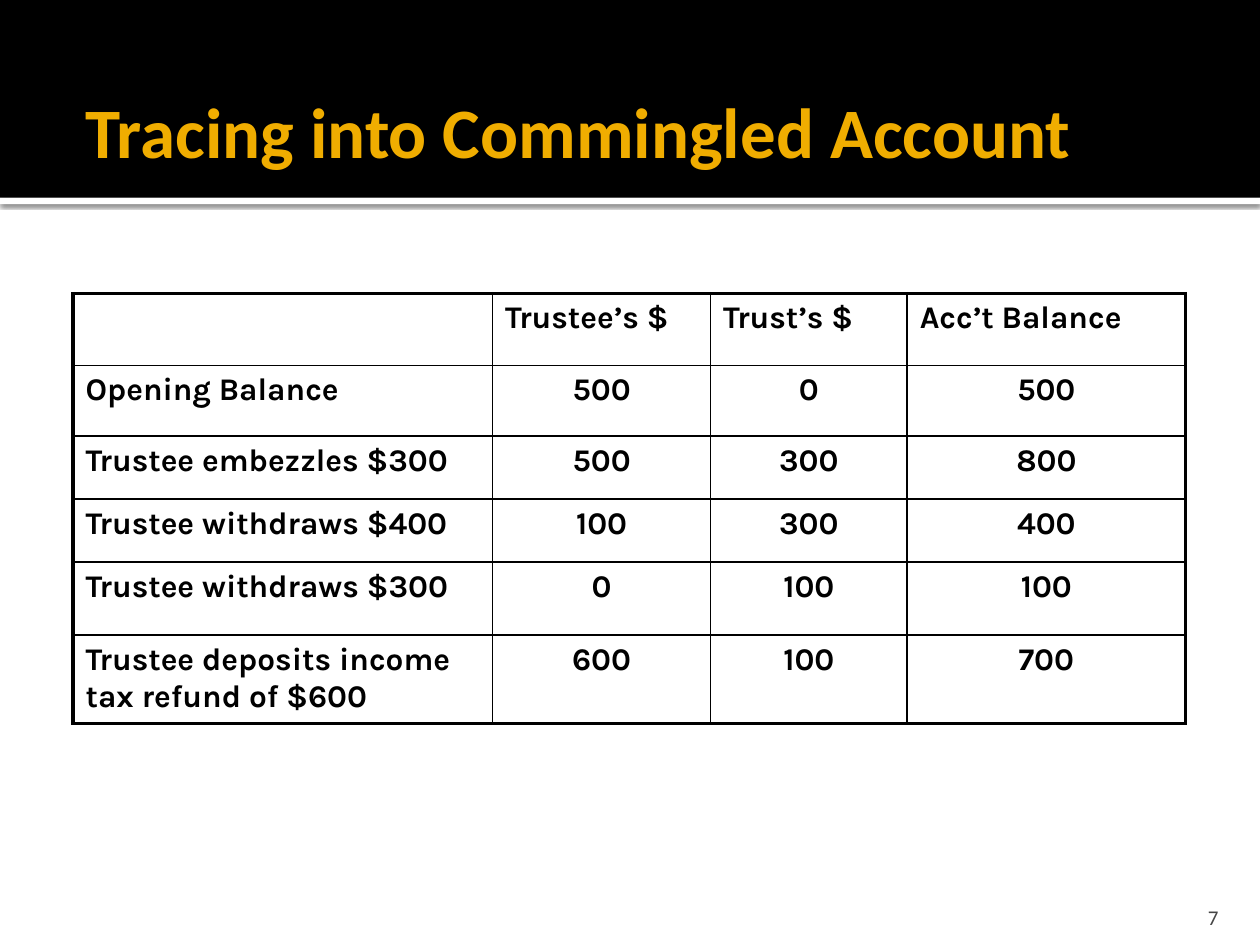
from pptx import Presentation
from pptx.dml.color import RGBColor
from pptx.enum.shapes import MSO_SHAPE
from pptx.enum.text import MSO_ANCHOR, PP_ALIGN
from pptx.oxml import parse_xml
from pptx.oxml.ns import nsdecls
from pptx.util import Inches, Pt

RECTANGLE = MSO_SHAPE.RECTANGLE
MIDDLE, BOTTOM = MSO_ANCHOR.MIDDLE, MSO_ANCHOR.BOTTOM
LEFT, CENTER, RIGHT = PP_ALIGN.LEFT, PP_ALIGN.CENTER, PP_ALIGN.RIGHT

BLACK = RGBColor(0x00, 0x00, 0x00)
WHITE = RGBColor(0xFF, 0xFF, 0xFF)
GOLD = RGBColor(0xF0, 0xAD, 0x00)
GRAY = RGBColor(0x45, 0x45, 0x45)

HEADINGS = ["", "Trustee’s $", "Trust’s $", "Acc’t Balance"]
LEDGER = [
    ["Opening Balance", "500", "0", "500"],
    ["Trustee embezzles $300", "500", "300", "800"],
    ["Trustee withdraws $400", "100", "300", "400"],
    ["Trustee withdraws $300", "0", "100", "100"],
    ["Trustee deposits income tax refund of $600", "600", "100", "700"],
]
COLUMN_WIDTHS = [3.33, 1.73, 1.56, 2.21]
ROW_HEIGHTS = [0.57, 0.56, 0.5, 0.5, 0.58, 0.7]


class SlideBuilder:
    fonts = {
        "title": {"name": "Calibri", "size": Pt(40.5), "bold": True, "color": GOLD},
        "ledger": {"name": "Karla", "size": Pt(18), "bold": True, "color": BLACK},
        "number": {"name": "Calibri", "size": Pt(12), "bold": False, "color": GRAY},
    }
    outer_border, inner_border = Pt(2.25), Pt(1)

    def __init__(self, slide):
        self.slide = slide

    def fill_frame(self, frame, text, style, align):
        paragraph = frame.paragraphs[0]
        paragraph.alignment = align
        run = paragraph.add_run()
        run.text = text
        for attribute, value in self.fonts[style].items():
            if attribute == "color":
                run.font.color.rgb = value
            else:
                setattr(run.font, attribute, value)

    def band(self, top, height, color, shadow=False):
        bar = self.slide.shapes.add_shape(
            RECTANGLE, 0, Inches(top), Inches(10), Inches(height))
        bar.shadow.inherit = False
        bar.fill.solid()
        bar.fill.fore_color.rgb = color
        bar.line.fill.background()
        if shadow:
            effects = bar._element.spPr.find("{*}effectLst")
            effects.append(parse_xml(
                f'<a:outerShdw {nsdecls("a")} blurRad="{Pt(2.5)}" dist="{Pt(0.8)}"'
                ' dir="5400000" algn="tl" rotWithShape="0"><a:srgbClr val="000000">'
                '<a:alpha val="60000"/></a:srgbClr></a:outerShdw>'))

    def text(self, box, text, style, align, **frame_format):
        frame = self.slide.shapes.add_textbox(*map(Inches, box)).text_frame
        frame.word_wrap = True
        for attribute, value in frame_format.items():
            setattr(frame, attribute, value)
        self.fill_frame(frame, text, style, align)

    def border(self, cell, outer_sides):
        properties = cell._tc.get_or_add_tcPr()
        for position, side in enumerate("LRTB"):
            width = self.outer_border if side in outer_sides else self.inner_border
            properties.insert(position, parse_xml(
                f'<a:ln{side} {nsdecls("a")} w="{width}"><a:solidFill>'
                f'<a:srgbClr val="{BLACK}"/></a:solidFill></a:ln{side}>'))

    def table(self, left, top, rows, widths, heights):
        last_row, last_column = len(rows) - 1, len(widths) - 1
        grid = self.slide.shapes.add_table(
            len(rows), len(widths), Inches(left), Inches(top),
            Inches(sum(widths)), Inches(sum(heights))).table
        grid.first_row = grid.horz_banding = False
        for column, width in zip(grid.columns, widths):
            column.width = Inches(width)
        for row, height in zip(grid.rows, heights):
            row.height = Inches(height)
        for r, values in enumerate(rows):
            for c, value in enumerate(values):
                cell = grid.cell(r, c)
                cell.fill.background()
                edges = {"L": c == 0, "R": c == last_column,
                         "T": r == 0, "B": r == last_row}
                self.border(cell, [side for side, outer in edges.items() if outer])
                if value:
                    align = CENTER if r and c else LEFT
                    self.fill_frame(cell.text_frame, value, "ledger", align)


def main():
    deck = Presentation()
    deck.slide_width, deck.slide_height = Inches(10), Inches(7.5)
    builder = SlideBuilder(deck.slides.add_slide(deck.slide_layouts[6]))
    builder.band(1.57, 0.05, WHITE, shadow=True)
    builder.band(0, 1.57, BLACK)
    builder.text((0.58, 0.23, 9.2, 1.6), "Tracing into Commingled Account",
                 "title", LEFT, vertical_anchor=MIDDLE, margin_right=Inches(0.05))
    builder.table(0.58, 2.33, [HEADINGS, *LEDGER], COLUMN_WIDTHS, ROW_HEIGHTS)
    builder.text((8.97, 7.08, 0.8, 0.3), "7", "number", RIGHT,
                 vertical_anchor=BOTTOM, margin_bottom=0)
    deck.save("out.pptx")


if __name__ == "__main__":
    main()
